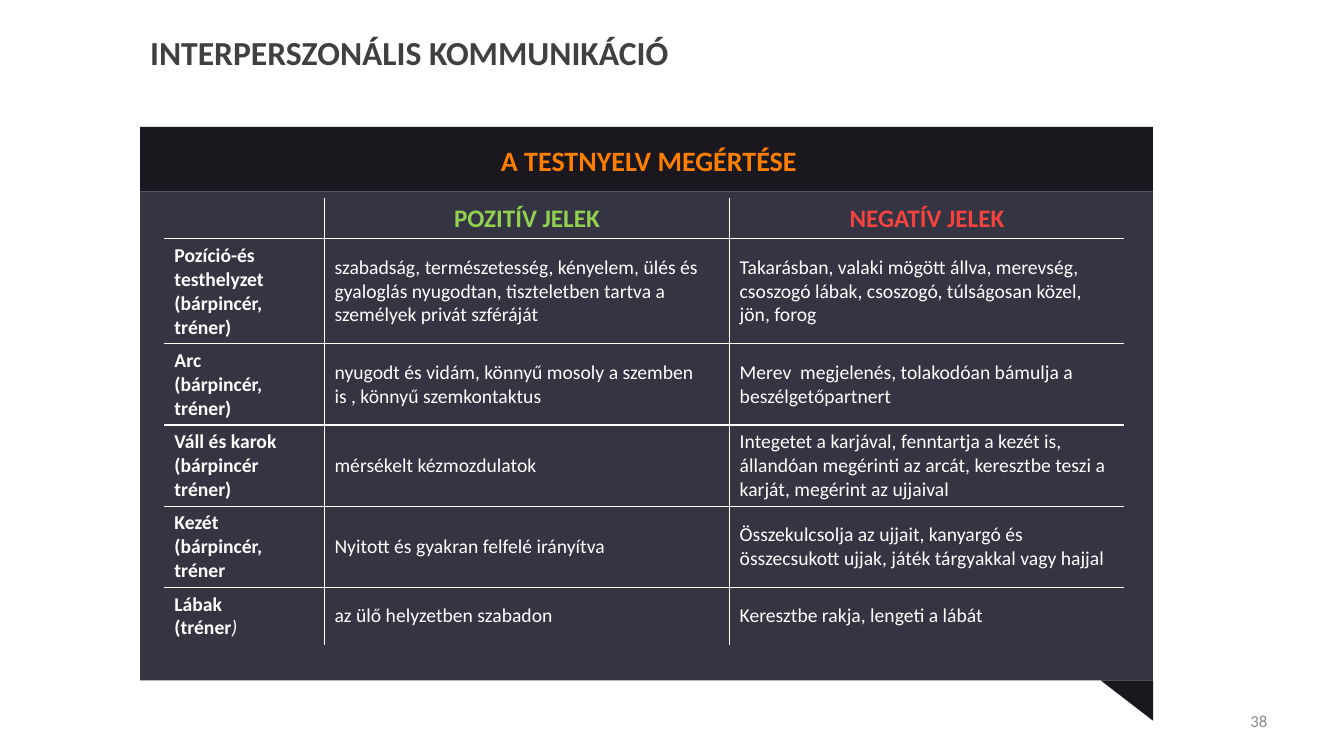
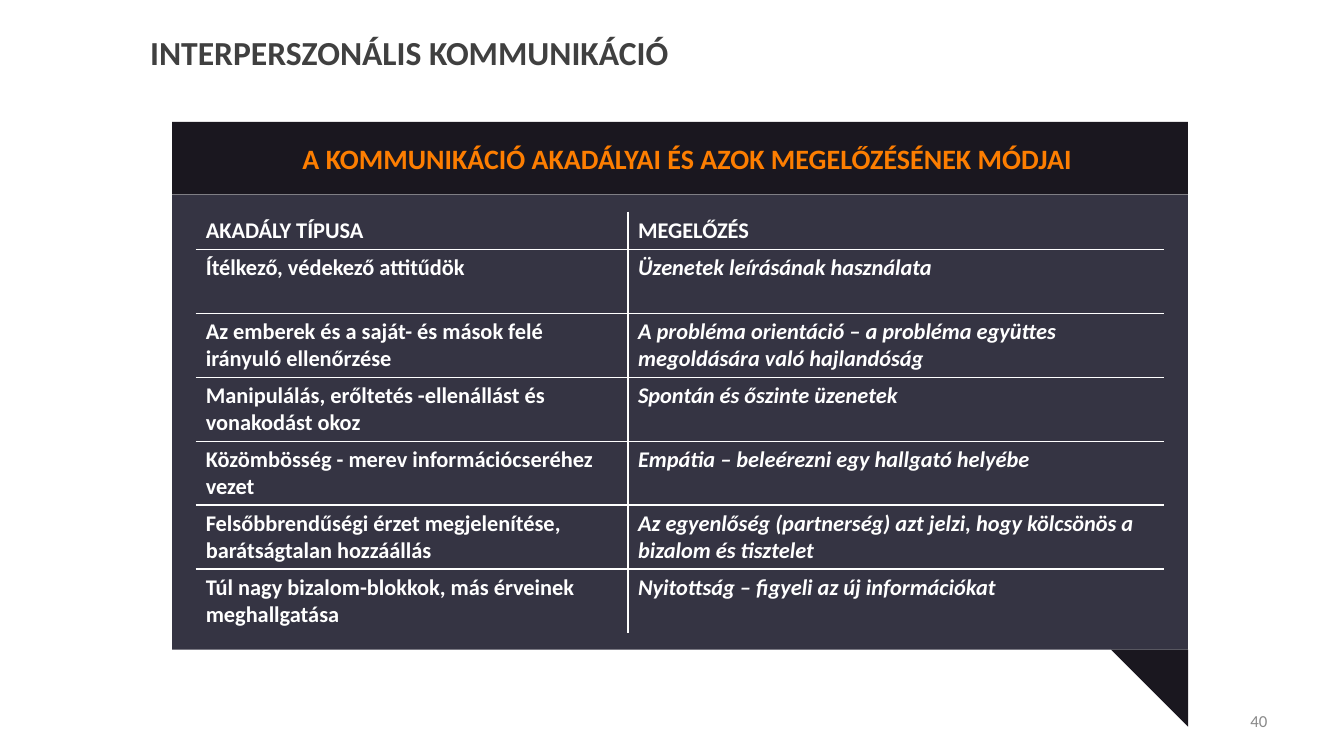
import pptx
import pptx.util
import pptx.dml.color
import pptx.enum.shapes
import pptx.enum.text
import pptx.oxml.ns
import lxml.etree

Pt = pptx.util.Pt
RGBColor = pptx.dml.color.RGBColor
PP_ALIGN = pptx.enum.text.PP_ALIGN
MSO_ANCHOR = pptx.enum.text.MSO_ANCHOR
MSO_SHAPE = pptx.enum.shapes.MSO_SHAPE

FONT = "Calibri"
WHITE = RGBColor(0xFF, 0xFF, 0xFF)
TITLE_GREY = RGBColor(0x40, 0x40, 0x40)
NUMBER_GREY = RGBColor(0x89, 0x89, 0x89)
PANEL = RGBColor(0x35, 0x34, 0x43)
BAND = RGBColor(0x1A, 0x17, 0x1F)
ORANGE = RGBColor(0xFD, 0x7E, 0x01)
GREEN = RGBColor(0x92, 0xD0, 0x50)
RED = RGBColor(0xF4, 0x43, 0x3E)

TITLE = "INTERPERSZONÁLIS KOMMUNIKÁCIÓ"

BODY_LANGUAGE = {
    "number": "38",
    "heading": "A TESTNYELV MEGÉRTÉSE",
    "panel": {"left": 100, "top": 90.7, "width": 723.6, "band": 46, "bottom": 486,
              "fold": (37.4, 28.8)},
    "heading_at": (136, 98.6, 655, 32),
    "table_at": (117.4, 141.6),
    "columns": [114.4, 289.4, 282],
    "row_heights": [29, 75, 58, 58, 58, 41],
    "rows": [
        ("", "POZITÍV JELEK", "NEGATÍV JELEK"),
        ("Pozíció-és testhelyzet\v(bárpincér, tréner)",
         "szabadság, természetesség, kényelem, ülés és gyaloglás nyugodtan, "
         "tiszteletben tartva a személyek privát szféráját",
         "Takarásban, valaki mögött állva, merevség, csoszogó lábak, csoszogó, "
         "túlságosan közel, jön, forog"),
        ("Arc\v(bárpincér, tréner)",
         "nyugodt és vidám, könnyű mosoly a szemben is , könnyű szemkontaktus",
         "Merev  megjelenés, tolakodóan bámulja a beszélgetőpartnert"),
        ("Váll és karok (bárpincér tréner)",
         "mérsékelt kézmozdulatok",
         "Integetet a karjával, fenntartja a kezét is, állandóan megérinti az arcát, "
         "keresztbe teszi a karját, megérint az ujjaival"),
        ("Kezét\v(bárpincér, tréner",
         "Nyitott és gyakran felfelé irányítva",
         "Összekulcsolja az ujjait, kanyargó és összecsukott ujjak, "
         "játék tárgyakkal vagy hajjal"),
        ("Lábak\v(tréner", "az ülő helyzetben szabadon",
         "Keresztbe rakja, lengeti a lábát"),
    ],
}

BARRIERS = {
    "number": "40",
    "heading": "A KOMMUNIKÁCIÓ AKADÁLYAI ÉS AZOK MEGELŐZÉSÉNEK MÓDJAI",
    "panel": {"left": 123, "top": 87, "width": 725.6, "band": 52, "bottom": 464,
              "fold": (55, 55)},
    "heading_at": (149, 97.2, 684, 32),
    "table_at": (139.8, 151.2),
    "columns": [308.8, 383],
    "row_heights": [26.8] + [45.7] * 6,
    "rows": [
        ("AKADÁLY TÍPUSA", "MEGELŐZÉS"),
        ("Ítélkező, védekező attitűdök", "Üzenetek leírásának használata"),
        ("Az emberek és a saját- és mások felé irányuló ellenőrzése",
         "A probléma orientáció – a probléma együttes megoldására való hajlandóság"),
        ("Manipulálás, erőltetés -ellenállást és vonakodást okoz",
         "Spontán és őszinte üzenetek"),
        ("Közömbösség - merev információcseréhez vezet",
         "Empátia – beleérezni egy hallgató helyébe"),
        ("Felsőbbrendűségi érzet megjelenítése, barátságtalan hozzáállás",
         "Az egyenlőség (partnerség) azt jelzi, hogy kölcsönös a bizalom és tisztelet"),
        ("Túl nagy bizalom-blokkok, más érveinek meghallgatása",
         "Nyitottság – figyeli az új információkat"),
    ],
}


def place(shape, left, top, width, height):
    shape.left, shape.top = Pt(left), Pt(top)
    shape.width, shape.height = Pt(width), Pt(height)


def style_span(span, size, color, bold=False, italic=False):
    span.font.name = FONT
    span.font.size = Pt(size)
    span.font.color.rgb = color
    span.font.bold = bold
    span.font.italic = italic


def write(frame, text, size, color, align=PP_ALIGN.LEFT, bold=False, italic=False):
    frame.text = text
    para = frame.paragraphs[0]
    para.alignment = align
    for span in para.runs:
        style_span(span, size, color, bold, italic)


def add_label(page, box_at, text, size, color, align, bold=False):
    box = page.shapes.add_textbox(*map(Pt, box_at))
    box.text_frame.word_wrap = True
    box.text_frame.vertical_anchor = MSO_ANCHOR.MIDDLE
    write(box.text_frame, text, size, color, align, bold)


def add_panel(page, left, top, width, band, bottom, fold):
    """Draw the dark panel with its heading band and folded corner."""
    group = page.shapes.add_group_shape()
    fold_width, fold_height = fold
    body_top = top + band
    parts = [
        (MSO_SHAPE.RECTANGLE, PANEL, 0, (left, body_top, width, bottom - body_top)),
        (MSO_SHAPE.RECTANGLE, BAND, 0, (left, top, width, band)),
        (MSO_SHAPE.RIGHT_TRIANGLE, BAND, 180,
         (left + width - fold_width, bottom, fold_width, fold_height)),
    ]
    for kind, color, rotation, part_at in parts:
        part = group.shapes.add_shape(kind, *map(Pt, part_at))
        part.shadow.inherit = False
        part.rotation = rotation
        part.fill.solid()
        part.fill.fore_color.rgb = color
        part.line.fill.background()


def set_borders(cell, inner_edges):
    """Rule the inner edges in white and leave the outer ones bare."""
    qn = pptx.oxml.ns.qn
    properties = cell._tc.get_or_add_tcPr()
    for edge, is_inner in inner_edges.items():
        line = lxml.etree.SubElement(properties, qn("a:ln" + edge), w=str(Pt(1)))
        if is_inner:
            fill = lxml.etree.SubElement(line, qn("a:solidFill"))
            lxml.etree.SubElement(fill, qn("a:srgbClr"), val=str(WHITE))
        else:
            lxml.etree.SubElement(line, qn("a:noFill"))


def add_grid(page, content, cell_style, anchor):
    rows, columns, heights = content["rows"], content["columns"], content["row_heights"]
    size = (sum(columns), sum(heights))
    frame = page.shapes.add_table(len(rows), len(columns),
                                  *map(Pt, content["table_at"] + size))
    table = frame.table
    table.first_row = table.horz_banding = False
    for column, width in zip(table.columns, columns):
        column.width = Pt(width)
    for row, height in zip(table.rows, heights):
        row.height = Pt(height)
    for r, texts in enumerate(rows):
        for c, text in enumerate(texts):
            cell = table.cell(r, c)
            set_borders(cell, {"L": c > 0, "R": c < len(columns) - 1,
                               "T": r > 0, "B": r < len(rows) - 1})
            cell.fill.background()
            cell.vertical_anchor = anchor
            write(cell.text_frame, text, **cell_style(r, c))
    return table


def signs_style(row, column):
    if row == 0:
        return {"size": 18, "color": (WHITE, GREEN, RED)[column],
                "align": PP_ALIGN.CENTER, "bold": True}
    return {"size": 14, "color": WHITE, "bold": column == 0}


def barriers_style(row, column):
    return {"size": 16, "color": WHITE, "bold": True, "italic": row > 0 and column == 1}


def add_page(deck, layout, content):
    """Add a page with everything but its table."""
    page = deck.slides.add_slide(layout)
    write(page.shapes.title.text_frame, TITLE, 24, TITLE_GREY, bold=True)
    add_label(page, (688.3, 500.4, 224, 28.8), content["number"], 12, NUMBER_GREY,
              PP_ALIGN.RIGHT)
    add_panel(page, **content["panel"])
    add_label(page, content["heading_at"], content["heading"], 20, ORANGE,
              PP_ALIGN.CENTER, bold=True)
    return page


def main():
    deck = pptx.Presentation()
    deck.slide_width, deck.slide_height = Pt(960), Pt(540)
    layout = deck.slide_layouts.get_by_name("Title Only")
    title = layout.placeholders[0]
    place(title, 100, 15.1, 760, 44.6)
    title.text_frame.vertical_anchor = MSO_ANCHOR.MIDDLE

    page = add_page(deck, layout, BODY_LANGUAGE)
    table = add_grid(page, BODY_LANGUAGE, signs_style, MSO_ANCHOR.MIDDLE)
    last_label = table.cell(len(BODY_LANGUAGE["rows"]) - 1, 0)
    bracket = last_label.text_frame.paragraphs[0].add_run()
    bracket.text = ")"
    style_span(bracket, 14, WHITE, italic=True)

    page = add_page(deck, layout, BARRIERS)
    add_grid(page, BARRIERS, barriers_style, MSO_ANCHOR.TOP)

    deck.save("out.pptx")


if __name__ == "__main__":
    main()
